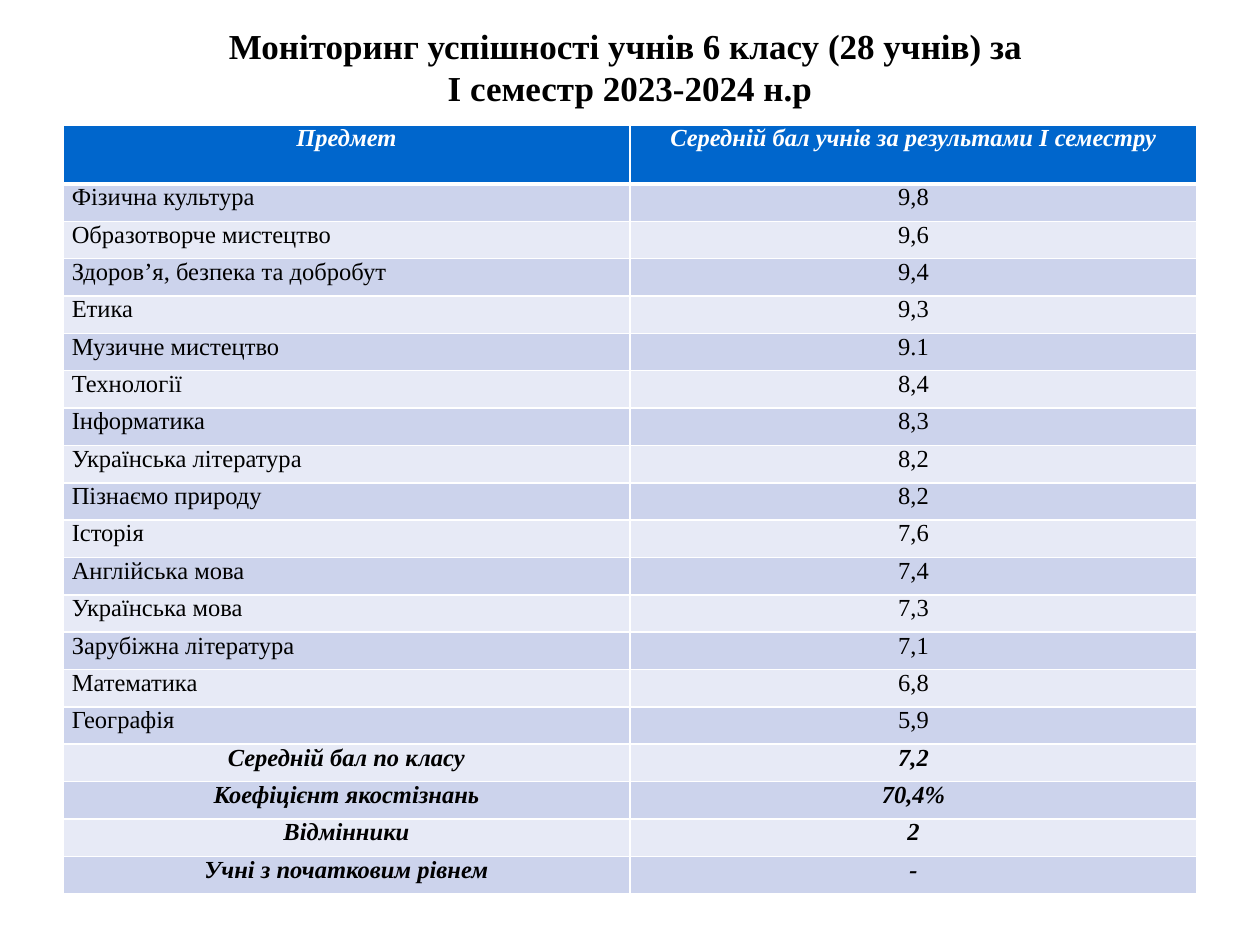
from dataclasses import dataclass

from lxml import etree
from pptx import Presentation
from pptx.dml.color import RGBColor
from pptx.enum.text import MSO_ANCHOR, MSO_AUTO_SIZE, PP_ALIGN
from pptx.oxml.ns import qn
from pptx.util import Inches, Pt

LEFT, CENTER = PP_ALIGN.LEFT, PP_ALIGN.CENTER
TOP, MIDDLE = MSO_ANCHOR.TOP, MSO_ANCHOR.MIDDLE
NO_AUTOFIT = MSO_AUTO_SIZE.NONE
TITLE_ONLY = 5


@dataclass(frozen=True)
class Theme:
    font: str = "Times New Roman"
    title_size: int = 20
    table_size: int = 14
    ink: str = "000000"
    white: str = "FFFFFF"
    header: str = "0066CC"
    bands: tuple = ("CCD3EC", "E7EAF6")
    border: int = 1
    header_border: int = 3


THEME = Theme()

# Slide grid, in inches
SLIDE_WIDTH, SLIDE_HEIGHT = 10, 7.5
MARGIN = 0.05 * SLIDE_WIDTH
CONTENT_WIDTH = SLIDE_WIDTH - 2 * MARGIN
TITLE_BOX = (MARGIN, 0.21, CONTENT_WIDTH, 0.64)
TABLE_BOX = (MARGIN, 0.99, CONTENT_WIDTH, 6.11)
HEADER_HEIGHT = 0.47
CELL_INSET = 0.07

TITLE_LINES = (
    "Моніторинг успішності учнів 6 класу (28 учнів) за ",
    "І семестр 2023-2024 н.р",
)
HEADINGS = ("Предмет", "Середній бал учнів за результами І семестру")
SUBJECTS = (
    ("Фізична культура", "9,8"),
    ("Образотворче мистецтво", "9,6"),
    ("Здоров’я, безпека та добробут", "9,4"),
    ("Етика", "9,3"),
    ("Музичне мистецтво", "9.1"),
    ("Технології", "8,4"),
    ("Інформатика", "8,3"),
    ("Українська література", "8,2"),
    ("Пізнаємо природу", "8,2"),
    ("Історія", "7,6"),
    ("Англійська мова", "7,4"),
    ("Українська мова", "7,3"),
    ("Зарубіжна література", "7,1"),
    ("Математика", "6,8"),
    ("Географія", "5,9"),
)
SUMMARY = (
    ("Середній бал по класу", "7,2"),
    ("Коефіцієнт якостізнань", "70,4%"),
    ("Відмінники", "2"),
    ("Учні з початковим рівнем", "-"),
)


def add_run(paragraph, text, size, color, bold=False, italic=False):
    run = paragraph.add_run()
    run.text = text
    font = run.font
    font.name, font.size = THEME.font, Pt(size)
    font.bold, font.italic = bold, italic
    font.color.rgb = RGBColor.from_string(color)


def add_title(slide, box):
    title = slide.shapes.title
    title.left, title.top, title.width, title.height = map(Inches, box)
    frame = title.text_frame
    frame.word_wrap = True
    frame.auto_size = NO_AUTOFIT
    frame.vertical_anchor = MIDDLE
    paragraph = frame.paragraphs[0]
    paragraph.alignment = CENTER
    for index, line in enumerate(TITLE_LINES):
        if index:
            paragraph.add_line_break()
        add_run(paragraph, line, THEME.title_size, THEME.ink, bold=True)


def set_borders(cell, top, bottom):
    properties = cell._tc.get_or_add_tcPr()
    widths = {"L": THEME.border, "R": THEME.border, "T": top, "B": bottom}
    for side, width in widths.items():
        line = etree.SubElement(properties, qn(f"a:ln{side}"), w=str(Pt(width)))
        fill = etree.SubElement(line, qn("a:solidFill"))
        etree.SubElement(fill, qn("a:srgbClr"), val=THEME.white)


def fill_cell(cell, text, fill, color, alignment, emphasis, top, bottom):
    set_borders(cell, top, bottom)
    cell.fill.solid()
    cell.fill.fore_color.rgb = RGBColor.from_string(fill)
    cell.margin_left = cell.margin_right = Inches(CELL_INSET)
    cell.margin_top = cell.margin_bottom = 0
    cell.vertical_anchor = TOP
    paragraph = cell.text_frame.paragraphs[0]
    paragraph.alignment = alignment
    add_run(paragraph, text, THEME.table_size, color, emphasis, emphasis)


def add_grades_table(slide, box):
    rows = (HEADINGS, *SUBJECTS, *SUMMARY)
    left, top, width, height = box
    table = slide.shapes.add_table(
        len(rows), len(HEADINGS), *map(Inches, box)
    ).table
    for column in table.columns:
        column.width = Inches(width / len(HEADINGS))
    body_height = (height - HEADER_HEIGHT) / (len(rows) - 1)

    for row_index, values in enumerate(rows):
        is_header = row_index == 0
        is_subject = 0 < row_index <= len(SUBJECTS)
        table.rows[row_index].height = Inches(
            HEADER_HEIGHT if is_header else body_height
        )
        fill = THEME.header if is_header else THEME.bands[(row_index - 1) % 2]
        for column_index, text in enumerate(values):
            fill_cell(
                table.cell(row_index, column_index),
                text,
                fill,
                color=THEME.white if is_header else THEME.ink,
                alignment=LEFT if is_subject and column_index == 0 else CENTER,
                emphasis=not is_subject,
                top=THEME.header_border if row_index == 1 else THEME.border,
                bottom=THEME.header_border if is_header else THEME.border,
            )


def main():
    presentation = Presentation()
    presentation.slide_width = Inches(SLIDE_WIDTH)
    presentation.slide_height = Inches(SLIDE_HEIGHT)
    slide = presentation.slides.add_slide(presentation.slide_layouts[TITLE_ONLY])
    add_title(slide, TITLE_BOX)
    add_grades_table(slide, TABLE_BOX)
    presentation.save("out.pptx")


if __name__ == "__main__":
    main()
